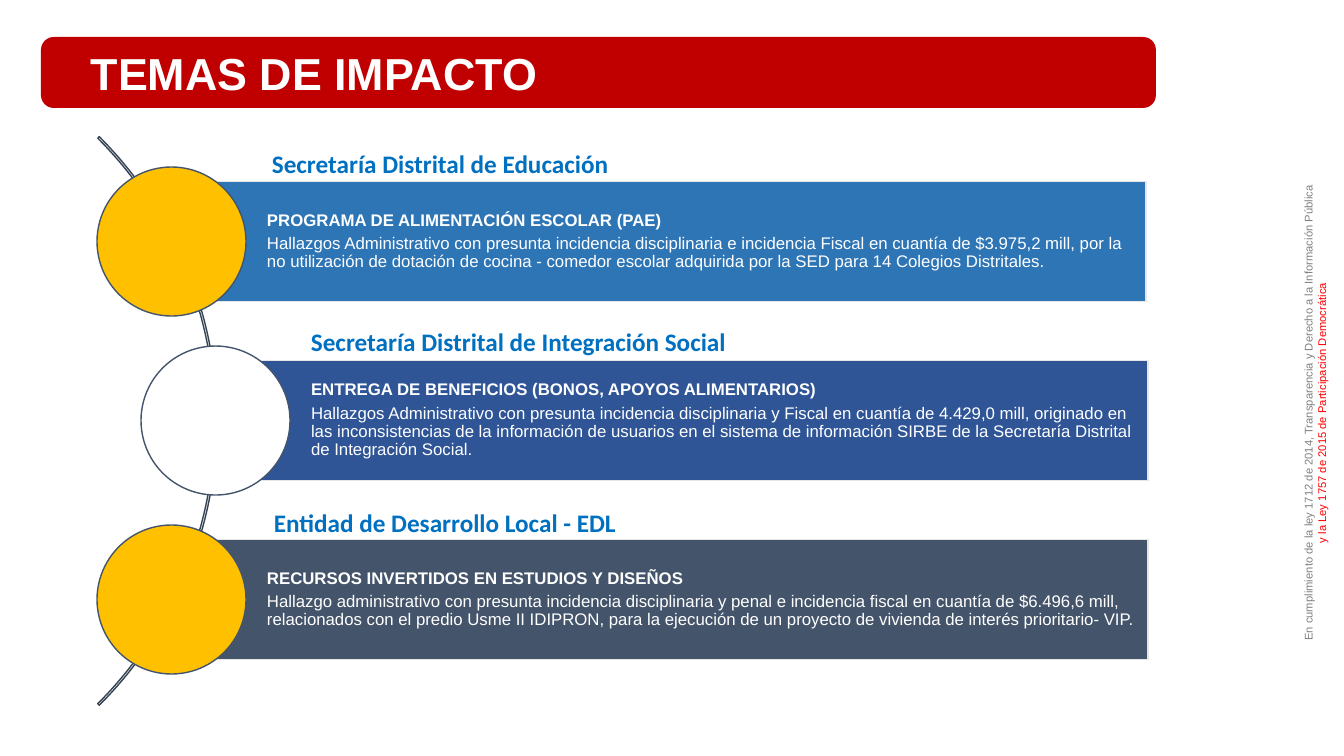
import pptx
import pptx.util
import pptx.dml.color
import pptx.enum.shapes
import pptx.enum.text

TITLE = "TEMAS DE IMPACTO"
# circle left, circle fill, bar right, bar fill, heading place, heading, topic, finding
TOPICS = [
    (97, "FFC000", 1146, "2E75B6", (262, 143), "Secretaría Distrital de Educación",
     "PROGRAMA DE ALIMENTACIÓN ESCOLAR (PAE)",
     "Hallazgos Administrativo con presunta incidencia disciplinaria e incidencia "
     "Fiscal en cuantía de $3.975,2 mill, por la no utilización de dotación de "
     "cocina - comedor escolar adquirida por la SED para 14 Colegios Distritales."),
    (141, "FFFFFF", 1148, "2F5597", (301, 321), "Secretaría Distrital de Integración Social",
     "ENTREGA DE BENEFICIOS (BONOS, APOYOS ALIMENTARIOS)",
     "Hallazgos Administrativo con presunta incidencia disciplinaria y Fiscal en "
     "cuantía de 4.429,0 mill, originado en las inconsistencias de la información "
     "de usuarios en el sistema de información SIRBE de la Secretaría Distrital de "
     "Integración Social."),
    (97, "FFC000", 1148, "44546A", (264, 502), "Entidad de Desarrollo Local - EDL",
     "RECURSOS INVERTIDOS EN ESTUDIOS Y DISEÑOS",
     "Hallazgo administrativo con presunta incidencia disciplinaria y penal e "
     "incidencia fiscal en cuantía de $6.496,6 mill, relacionados con el predio "
     "Usme II IDIPRON, para la ejecución de un proyecto de vivienda de interés "
     "prioritario- VIP."),
]
LAWS = [
    ("En cumplimiento de la ley 1712 de 2014, Transparencia y Derecho a la "
     "Información Pública", "808080"),
    ("y la Ley 1757 de 2015 de Participación Democrática", "FF0000"),
]

SCALE = 914400 / 100.8
TOP, PITCH, DISC, BAR = 167, 179, 149, 120
KIND = pptx.enum.shapes.MSO_SHAPE
MIDDLE = pptx.enum.text.MSO_ANCHOR.MIDDLE
ALIGN = pptx.enum.text.PP_ALIGN


def px(n):
    return pptx.util.Emu(round(n * SCALE))


def color(code):
    return pptx.dml.color.RGBColor.from_string(code)


def draw(kind, box, fill=None, line=None):
    shape = slide.shapes.add_shape(kind, *map(px, box))
    shape.shadow.inherit = False
    if fill:
        shape.fill.solid()
        shape.fill.fore_color.rgb = color(fill)
    else:
        shape.fill.background()
    if line:
        shape.line.color.rgb = color(line)
        shape.line.width = pptx.util.Pt(1)
    else:
        shape.line.fill.background()
    return shape


def write(shape, lines, size, face="Arial", align=ALIGN.LEFT, space=None, gap=None):
    """Write one paragraph for each (text, colour, bold) line."""
    frame = shape.text_frame
    frame.word_wrap = True
    for i, (text, tint, bold) in enumerate(lines):
        para = frame.add_paragraph() if i else frame.paragraphs[0]
        para.alignment = align
        para.line_spacing = space
        para.space_after = gap
        run = para.add_run()
        run.text = text
        run.font.name = face
        run.font.size = pptx.util.Pt(size)
        run.font.bold = bold
        run.font.color.rgb = color(tint)


def label(box):
    return slide.shapes.add_textbox(*map(px, box))


deck = pptx.Presentation()
deck.slide_width, deck.slide_height = px(1344), px(756)
slide = deck.slides.add_slide(deck.slide_layouts[6])

arc = draw(KIND.BLOCK_ARC, (-587, 19, 804, 804), line="364355")
for i, value in enumerate((189, 27, 0.0027)):
    arc.adjustments[i] = value

for i, (left, disc, right, fill, place, head, topic, finding) in enumerate(TOPICS):
    top = TOP + i * PITCH
    start = left + DISC // 2 + 1
    bar = draw(KIND.RECTANGLE, (start, top + (DISC - BAR) / 2, right - start, BAR),
               fill, "E7E6E6")
    frame = bar.text_frame
    frame.vertical_anchor = MIDDLE
    frame.margin_left = px(95)
    frame.margin_top = frame.margin_right = frame.margin_bottom = px(3)
    write(bar, [(topic, "FFFFFF", True), (finding, "FFFFFF", False)], 12,
          space=0.9, gap=pptx.util.Pt(4))
    draw(KIND.OVAL, (left, top, DISC, DISC), disc, "44546A")
    write(label((*place, 800, 40)), [(head, "0070C0", True)], 18, "Calibri")

banner = draw(KIND.ROUNDED_RECTANGLE, (41, 37, 1115, 71), "C00000")
banner.adjustments[0] = 0.18
banner.text_frame.vertical_anchor = MIDDLE
banner.text_frame.margin_left = px(46)
write(banner, [(TITLE, "FFFFFF", True)], 32)

side = label((1051, 388, 541, 50))
side.rotation = 270
write(side, [(text, tint, False) for text, tint in LAWS], 8, align=ALIGN.CENTER)

deck.save("out.pptx")
